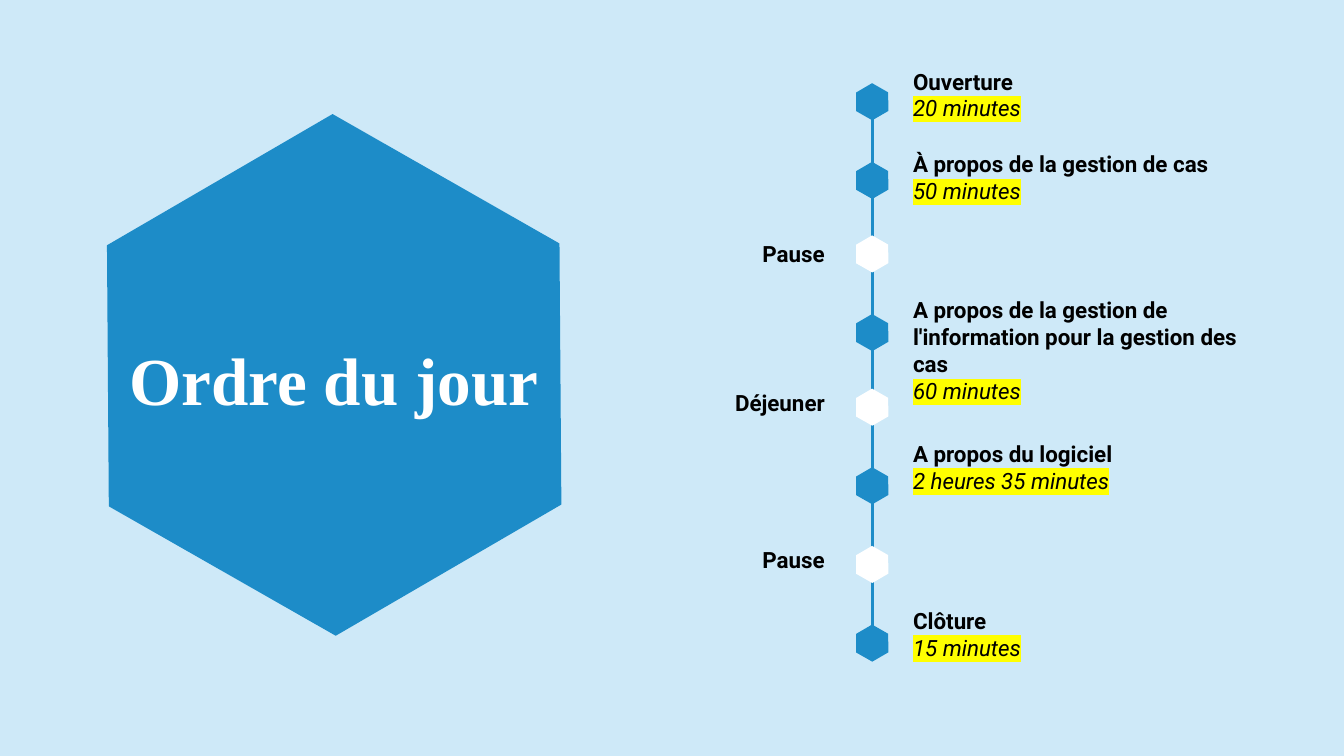
from dataclasses import dataclass

from lxml import etree
from pptx import Presentation
from pptx.dml import color
from pptx.enum import shapes, text
from pptx.oxml import ns
from pptx import util as u

HUES = {"sky": "CEE9F8", "blue": "1D8CC8", "white": "FFFFFF",
        "black": "000000", "mark": "FFFF00"}
AXIS = 623  # centre of the timeline


@dataclass
class Step:
    mid: float  # centre of the hexagon
    top: float  # top of the label
    name: str
    time: str = ""  # empty for a break
    wide: float = 258.5
    high: float = 46


STEPS = [
    Step(72.7, 44.8, "Ouverture", "20 minutes", wide=167),
    Step(128.9, 103.7, "À propos de la gestion de cas", "50 minutes"),
    Step(181.4, 168.3, "Pause"),
    Step(237.6, 208.1, "A propos de la gestion de l'information pour la gestion des cas",
         "60 minutes", high=65.5),
    Step(290.9, 274.3, "Déjeuner"),
    Step(347, 310.6, "A propos du logiciel", "2 heures 35 minutes"),
    Step(403.2, 386.6, "Pause"),
    Step(459.4, 430, "Clôture", "15 minutes"),
]


def rgb(hue: str) -> color.RGBColor:
    return color.RGBColor.from_string(HUES[hue])


def add_hex(page, x: float, y: float, wide: float, high: float, hue: str) -> None:
    """Draw a turned hexagon centred on x, y."""
    hexa = page.shapes.add_shape(
        shapes.MSO_SHAPE.HEXAGON, u.Pt(x - wide / 2), u.Pt(y - high / 2),
        u.Pt(wide), u.Pt(high))
    hexa.adjustments[0] = 0.29
    hexa.rotation = 29.7
    hexa.shadow.inherit = False
    hexa.fill.solid()
    hexa.fill.fore_color.rgb = rgb(hue)
    hexa.line.fill.background()


def add_box(page, x: float, y: float, wide: float, high: float):
    box = page.shapes.add_textbox(u.Pt(x), u.Pt(y), u.Pt(wide), u.Pt(high))
    box.text_frame.word_wrap = True
    return box.text_frame


def style(para, face: str, size: float, hue: str, bold: bool = True) -> None:
    font = para.font
    font.name, font.size, font.bold = face, u.Pt(size), bold
    font.color.rgb = rgb(hue)


def add_mark(run) -> None:
    """Highlight a run."""
    mark = etree.SubElement(run.font._element, ns.qn("a:highlight"))
    etree.SubElement(mark, ns.qn("a:srgbClr"), val=HUES["mark"])


def add_label(page, step: Step) -> None:
    """Write a session on the right, a break on the left."""
    if step.time:
        frame = add_box(page, 645.1, step.top, step.wide, step.high)
    else:
        frame = add_box(page, 489.6, step.top, 106.6, 26.6)
    name = frame.paragraphs[0]
    name.add_run().text = step.name
    style(name, "Roboto", 16, "black")
    if not step.time:
        name.alignment = text.PP_ALIGN.RIGHT
        return
    time = frame.add_paragraph()
    run = time.add_run()
    run.text = step.time
    style(time, "Roboto", 16, "black", bold=False)
    time.font.italic = True
    add_mark(run)


def add_title(page) -> None:
    add_hex(page, 238.7, 267.8, 373.7, 322.6, "blue")
    frame = add_box(page, 80.6, 252, 316.1, 43.9)
    frame.vertical_anchor = text.MSO_ANCHOR.MIDDLE
    para = frame.paragraphs[0]
    para.add_run().text = "Ordre du jour"
    para.alignment = text.PP_ALIGN.CENTER
    para.line_spacing = 0.9
    style(para, "Times New Roman", 48, "white")


def add_axis(page) -> None:
    line = page.shapes.add_connector(
        shapes.MSO_CONNECTOR.STRAIGHT, u.Pt(AXIS), u.Pt(67.7), u.Pt(AXIS), u.Pt(460.8))
    line.line.color.rgb = rgb("blue")
    line.line.width = u.Pt(2.25)
    etree.SubElement(line._element.spPr, ns.qn("a:effectLst"))


def main() -> None:
    deck = Presentation()
    deck.slide_width, deck.slide_height = u.Pt(960), u.Pt(540)
    page = deck.slides.add_slide(deck.slide_layouts[6])
    page.background.fill.solid()
    page.background.fill.fore_color.rgb = rgb("sky")

    # Title
    add_title(page)

    # Timeline
    add_axis(page)
    for step in STEPS:
        add_label(page, step)
        add_hex(page, AXIS, step.mid, 26.6, 23, "blue" if step.time else "white")

    deck.save("out.pptx")


if __name__ == "__main__":
    main()
